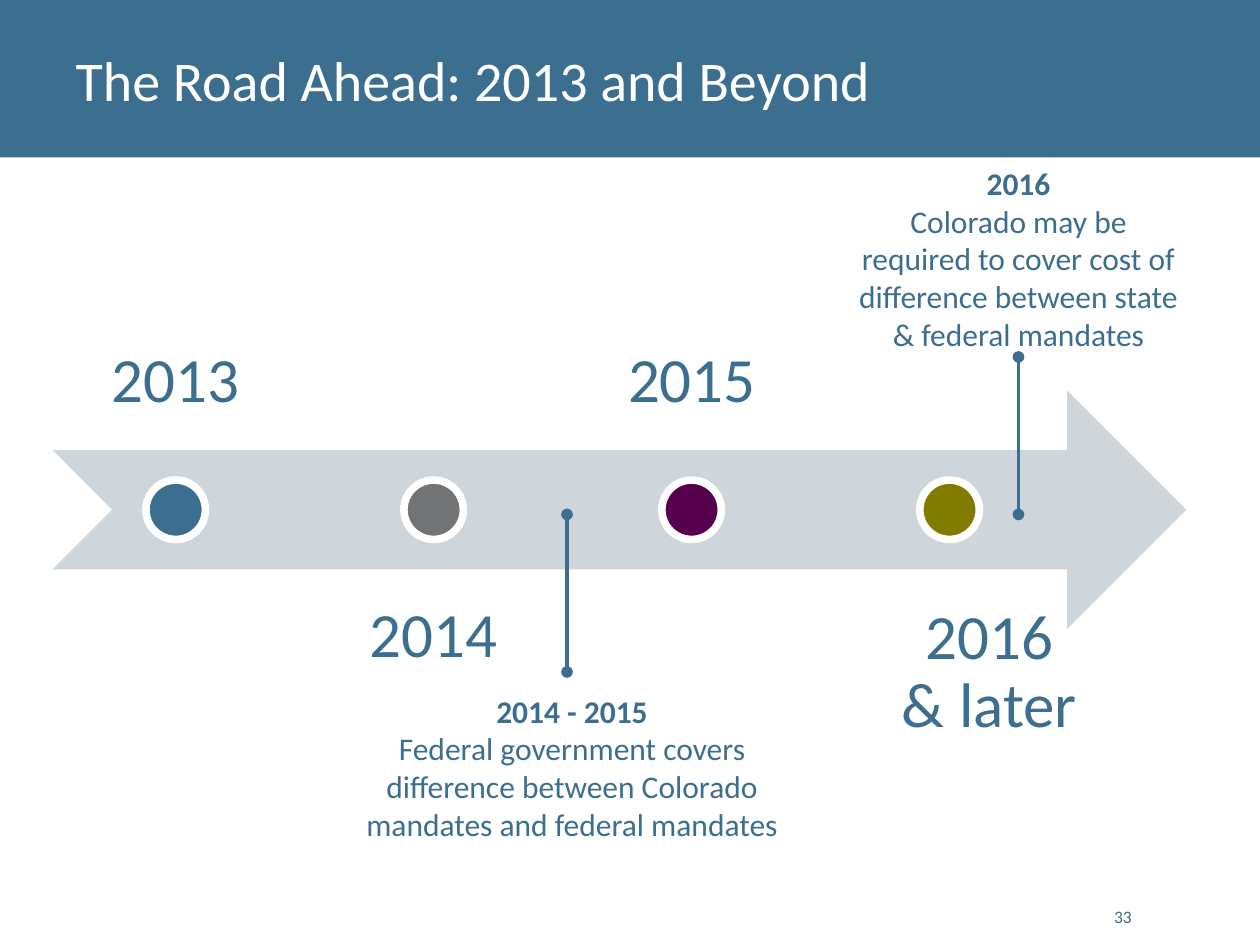
import pptx
import pptx.util
import pptx.dml.color
import pptx.enum.shapes
import pptx.enum.text
import pptx.oxml.ns
import lxml.etree

Pt = pptx.util.Pt
KIND = pptx.enum.shapes.MSO_SHAPE
ALIGN = pptx.enum.text.PP_ALIGN
ANCHOR = pptx.enum.text.MSO_ANCHOR
qn = pptx.oxml.ns.qn
HUES = {"blue": "3B6E8F", "pale": "CED5DB", "gray": "717375",
        "plum": "56004E", "olive": "817C00", "white": "FFFFFF"}
TONES = {name: pptx.dml.color.RGBColor.from_string(code)
         for name, code in HUES.items()}

deck = pptx.Presentation()
deck.slide_width, deck.slide_height = Pt(720), Pt(540)
slide = deck.slides.add_slide(deck.slide_layouts[5])
shapes = slide.shapes


def add_shape(kind, box, fill):
    shape = shapes.add_shape(kind, *map(Pt, box))
    shape.shadow.inherit = False
    shape.fill.solid()
    shape.fill.fore_color.rgb = TONES[fill]
    shape.line.fill.background()
    return shape


def write(shape, lines, size, align, anchor, tone="blue", bold=False):
    frame = shape.text_frame
    frame.word_wrap = True
    frame.vertical_anchor = anchor
    for i, line in enumerate(lines):
        para = frame.paragraphs[0] if i == 0 else frame.add_paragraph()
        para.alignment = align
        run = para.add_run()
        run.text = line
        run.font.name = "Calibri"
        run.font.size = Pt(size)
        run.font.bold = bold and i == 0
        run.font.color.rgb = TONES[tone]
    return frame


band = add_shape(KIND.RECTANGLE, (0, 0, 720, 90), "blue")
shapes._spTree.insert(2, band._element)

title = shapes.title
title.left, title.top, title.width, title.height = map(Pt, (36, 0, 648, 90))
write(title, ["The Road Ahead: 2013 and Beyond"], 32, ALIGN.LEFT,
      ANCHOR.MIDDLE, "white")

add_shape(KIND.NOTCHED_RIGHT_ARROW, (30, 223.2, 648, 136.2), "pale")

years = [("2013", 30, "blue"), ("2014", 177.6, "gray"),
         ("2015", 325.2, "plum"), ("2016 & later", 495.2, "olive")]
for i, (year, left, hue) in enumerate(years):
    above = i % 2 == 0
    label = shapes.add_textbox(Pt(left), Pt(121 if above else 325.4),
                               Pt(140.4), Pt(136.1))
    frame = write(label, [year], 36, ALIGN.CENTER,
                  ANCHOR.BOTTOM if above else ANCHOR.TOP)
    frame.margin_left = frame.margin_right = Pt(20.16)
    frame.margin_top = frame.margin_bottom = Pt(20.16)
    frame.paragraphs[0].line_spacing = 0.9
    dot = add_shape(KIND.OVAL, (83.4 + 147.4 * i, 274.3, 34, 34), hue)
    dot.line.color.rgb = TONES["white"]
    dot.line.width = Pt(4.33)

notes = [
    ((198, 391.7, 257.8, 94.3), "2014 - 2015",
     "Federal government covers difference between Colorado mandates "
     "and federal mandates"),
    ((480, 90, 204, 116.6), "2016",
     "Colorado may be required to cover cost of difference between state "
     "& federal mandates"),
]
for box, head, body in notes:
    note = shapes.add_textbox(*map(Pt, box))
    write(note, [head, body], 18, ALIGN.CENTER, ANCHOR.TOP, bold=True)

for x, top in [(582, 204), (324, 294)]:
    link = shapes.add_connector(pptx.enum.shapes.MSO_CONNECTOR.STRAIGHT,
                                Pt(x), Pt(top), Pt(x), Pt(top + 90))
    link.line.color.rgb = TONES["blue"]
    link.line.width = Pt(2.25)
    for end in ("a:headEnd", "a:tailEnd"):
        lxml.etree.SubElement(link.line._ln, qn(end), type="oval")
    lxml.etree.SubElement(link._element.spPr, qn("a:effectLst"))

number = shapes.add_textbox(Pt(625), Pt(504.7), Pt(28.8), Pt(28.8))
write(number, ["33"], 10, ALIGN.RIGHT, ANCHOR.BOTTOM)

deck.save("out.pptx")
